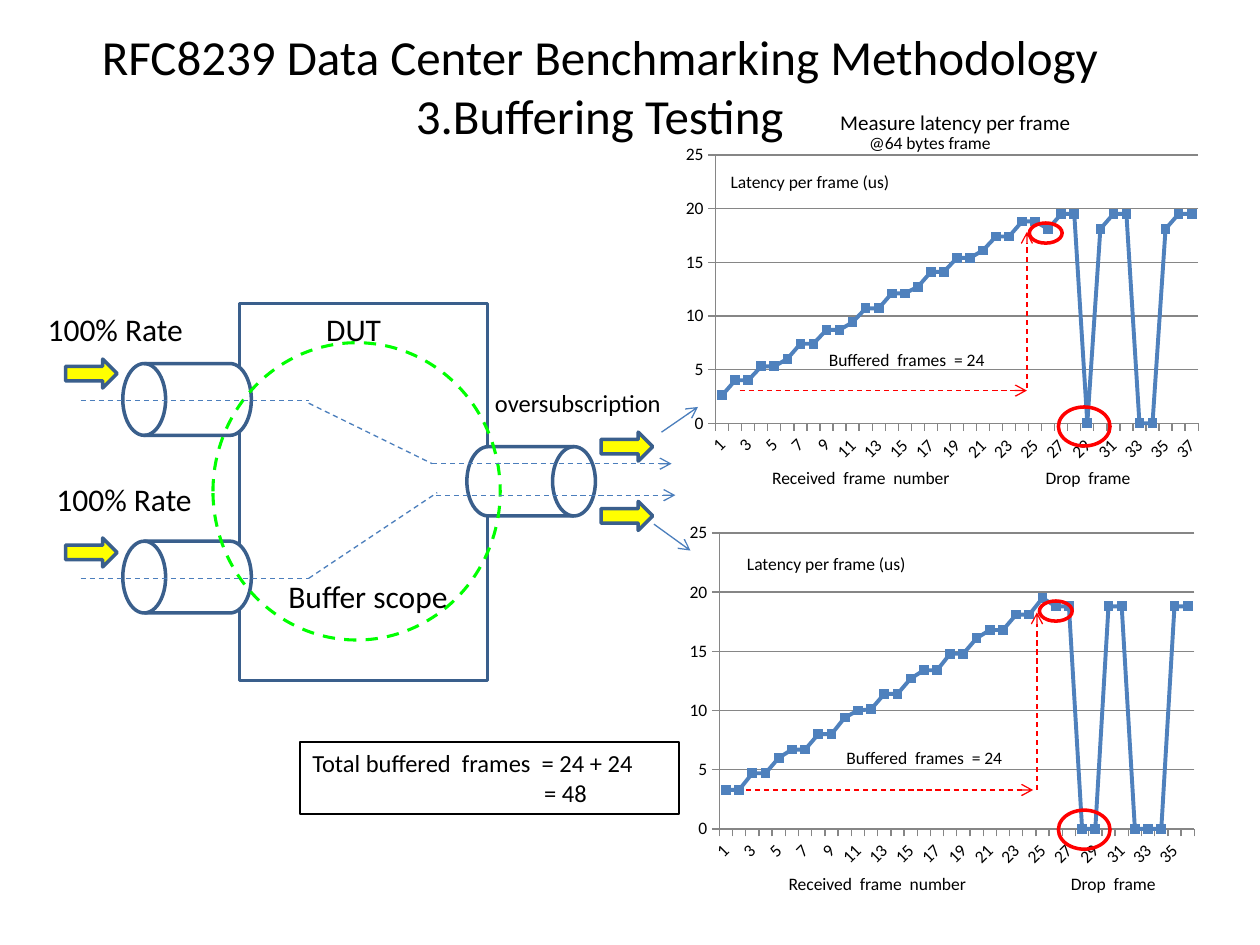
from dataclasses import dataclass
from typing import Optional

import pptx
import pptx.chart.data
import pptx.dml.color
import pptx.enum.chart
import pptx.enum.dml
import pptx.enum.shapes
import pptx.enum.text
import pptx.oxml
import pptx.oxml.ns
import pptx.util
from pptx.util import Inches

COLORS = {
    "text": "000000", "outline": "3A5F8C", "flow": "4B7EBC", "series": "4F81BD",
    "alert": "FF0000", "scope": "00FF00", "arrow": "FFFF00", "pipe": "FFFFFF",
    "axis": "868686",
}
FONT = "Calibri"
LABEL_HEIGHTS = {10: 0.27, 12: 0.3, 14: 0.34, 18: 0.4}
SHAPES = pptx.enum.shapes.MSO_SHAPE


@dataclass
class Label:
    text: str
    left: float
    top: float
    width: float
    size: int = 10
    wrap: bool = True


@dataclass
class Figure:
    kind: int
    left: float
    top: float
    width: float
    height: float
    line: str = "outline"
    fill: Optional[str] = None
    weight: float = 2
    rotation: int = 0
    dashed: bool = False


@dataclass
class Line:
    start: tuple[float, float]
    end: tuple[float, float]
    color: str = "flow"
    dashed: bool = True
    arrow: bool = False


@dataclass
class LatencyChart:
    box: tuple[float, float, float, float]
    plot: tuple[float, float, float, float]
    values: list[float]


def rgb(name: str):
    return pptx.dml.color.RGBColor.from_string(COLORS[name])


def set_font(font, size: float) -> None:
    font.name = FONT
    font.size = pptx.util.Pt(size)
    font.color.rgb = rgb("text")


def style_line(line, color: str, weight: float, dashed: bool = False) -> None:
    line.color.rgb = rgb(color)
    line.width = pptx.util.Pt(weight)
    if dashed:
        line.dash_style = pptx.enum.dml.MSO_LINE.DASH


def add_element(parent, tag: str, **attributes: str):
    element = pptx.oxml.ns.qn(tag)
    child = parent.makeelement(element, attributes)
    parent.append(child)
    return child


def draw_label(page, label: Label) -> None:
    box = page.shapes.add_textbox(Inches(label.left), Inches(label.top), Inches(label.width),
                                  Inches(LABEL_HEIGHTS[label.size]))
    box.text_frame.word_wrap = label.wrap
    para = box.text_frame.paragraphs[0]
    para.text = label.text
    set_font(para.font, label.size)


def draw_figure(page, figure: Figure):
    shape = page.shapes.add_shape(figure.kind, Inches(figure.left), Inches(figure.top),
                                  Inches(figure.width), Inches(figure.height))
    shape.shadow.inherit = False
    shape.rotation = figure.rotation
    if figure.fill:
        shape.fill.solid()
        shape.fill.fore_color.rgb = rgb(figure.fill)
    else:
        shape.fill.background()
    style_line(shape.line, figure.line, figure.weight, figure.dashed)
    return shape


def draw_line(page, line: Line) -> None:
    connector = page.shapes.add_connector(
        pptx.enum.shapes.MSO_CONNECTOR.STRAIGHT, *map(Inches, line.start + line.end))
    style_line(connector.line, line.color, 0.75, line.dashed)
    if line.arrow:
        add_element(connector.line._get_or_add_ln(), "a:tailEnd", type="arrow")
    add_element(connector._element.spPr, "a:effectLst")


def draw_chart(page, panel: LatencyChart) -> None:
    data = pptx.chart.data.CategoryChartData()
    data.categories = [str(number + 1) for number in range(len(panel.values))]
    data.add_series("Series 1", panel.values)
    chart = page.shapes.add_chart(pptx.enum.chart.XL_CHART_TYPE.LINE_MARKERS,
                                  *map(Inches, panel.box), data).chart
    chart.has_legend = False
    chart.has_title = False
    set_font(chart.font, 10)
    chart.plots[0].vary_by_categories = False
    series = chart.plots[0].series[0]
    series.smooth = False
    style_line(series.format.line, "series", 2.25)
    series.marker.style = pptx.enum.chart.XL_MARKER_STYLE.SQUARE
    series.marker.size = 5
    series.marker.format.fill.solid()
    series.marker.format.fill.fore_color.rgb = rgb("series")
    style_line(series.marker.format.line, "series", 0.75)

    for axis in (chart.category_axis, chart.value_axis):
        axis.major_tick_mark = pptx.enum.chart.XL_TICK_MARK.OUTSIDE
        axis.minor_tick_mark = pptx.enum.chart.XL_TICK_MARK.NONE
        style_line(axis.format.line, "axis", 0.75)
        set_font(axis.tick_labels.font, 10)
    chart.value_axis.minimum_scale = 0
    chart.value_axis.maximum_scale = 25
    chart.value_axis.major_unit = 5
    style_line(chart.value_axis.major_gridlines.format.line, "axis", 0.75)

    axis_xml = chart.category_axis._element
    axis_xml.find(pptx.oxml.ns.qn("c:txPr")).find(pptx.oxml.ns.qn("a:bodyPr")).set("rot", "-2700000")
    skip = axis_xml.makeelement(pptx.oxml.ns.qn("c:tickLblSkip"), {"val": "2"})
    axis_xml.find(pptx.oxml.ns.qn("c:noMultiLvlLbl")).addprevious(skip)

    plot_area = chart._chartSpace.chart.plotArea
    for old in plot_area.findall(pptx.oxml.ns.qn("c:layout")):
        plot_area.remove(old)
    layout = plot_area.makeelement(pptx.oxml.ns.qn("c:layout"), {})
    plot_area.insert(0, layout)
    manual = add_element(layout, "c:manualLayout")
    add_element(manual, "c:layoutTarget", val="inner")
    for name in ("xMode", "yMode"):
        add_element(manual, f"c:{name}", val="edge")
    left, top, width, height = panel.box
    plot_left, plot_top, plot_width, plot_height = panel.plot
    fractions = {"x": (plot_left - left) / width, "y": (plot_top - top) / height,
                 "w": plot_width / width, "h": plot_height / height}
    for name, fraction in fractions.items():
        add_element(manual, f"c:{name}", val=f"{fraction:.4f}")


def draw_title(page) -> None:
    box = page.shapes.add_textbox(Inches(0.51), Inches(0.05), Inches(8.5), Inches(1.26))
    box.text_frame.word_wrap = True
    box.text_frame.vertical_anchor = pptx.enum.text.MSO_ANCHOR.MIDDLE
    para = box.text_frame.paragraphs[0]
    para.alignment = pptx.enum.text.PP_ALIGN.CENTER
    para.add_run().text = "RFC8239 Data Center Benchmarking Methodology"
    para.add_line_break()
    para.add_run().text = "3.Buffering Testing"
    set_font(para.font, 28)


def draw_total(page) -> None:
    box = draw_figure(page, Figure(SHAPES.RECTANGLE, 2.38, 5.89, 3.01, 0.57, "text", weight=0.75))
    frame = box.text_frame
    frame.vertical_anchor = pptx.enum.text.MSO_ANCHOR.TOP
    frame.text = "Total buffered  frames  = 24 + 24\n= 48"
    for para in frame.paragraphs:
        para.alignment = pptx.enum.text.PP_ALIGN.LEFT
        set_font(para.font, 14)
    frame.paragraphs[1]._p.get_or_add_pPr().set("marL", str(Inches(1.84)))


CHARTS = [
    LatencyChart((5.36, 1.1, 4.24, 2.62), (5.68, 1.23, 3.83, 2.13), [
        2.6, 4, 4, 5.3, 5.3, 6, 7.4, 7.4, 8.7, 8.7, 9.4, 10.7, 10.7, 12.1, 12.1, 12.7, 14.1, 14.1, 15.4,
        15.4, 16.1, 17.4, 17.4, 18.8, 18.8, 18.1, 19.5, 19.5, 0, 18.1, 19.5, 19.5, 0, 0, 18.1, 19.5, 19.5]),
    LatencyChart((5.4, 4.1, 4.16, 2.85), (5.71, 4.23, 3.77, 2.35), [
        3.3, 3.3, 4.7, 4.7, 6, 6.7, 6.7, 8, 8, 9.4, 10, 10.1, 11.4, 11.4, 12.7, 13.4, 13.4, 14.8,
        14.8, 16.1, 16.8, 16.8, 18.1, 18.1, 19.5, 18.8, 18.8, 0, 0, 18.8, 18.8, 0, 0, 0, 18.8, 18.8]),
]
PIPES = [(3.94, 3.31, 0.55, 90), (1.2, 2.66, 0.57, 270), (1.2, 4.07, 0.57, 270)]
RATE_ARROWS = [(0.52, 2.85), (4.77, 3.43), (4.77, 3.98), (0.52, 4.27)]
DROP_RINGS = [(8.4, 3.23), (8.4, 6.43)]
PEAK_RINGS = [(8.17, 1.77), (8.25, 4.77)]
FIGURES = [
    Figure(SHAPES.RECTANGLE, 1.9, 2.41, 1.97, 2.99),
    *[Figure(SHAPES.FLOWCHART_MAGNETIC_DISK, left, top, width, 1.02, fill="pipe", rotation=turn)
      for left, top, width, turn in PIPES],
    *[Figure(SHAPES.RIGHT_ARROW, *spot, 0.41, 0.23, fill="arrow") for spot in RATE_ARROWS],
    *[Figure(SHAPES.OVAL, *spot, 0.41, 0.31, "alert") for spot in DROP_RINGS],
    *[Figure(SHAPES.OVAL, *spot, 0.26, 0.16, "alert") for spot in PEAK_RINGS],
    Figure(SHAPES.OVAL, 1.69, 2.72, 2.28, 2.36, "scope", weight=1.75, dashed=True),
]
LINES = [
    Line((0.64, 4.59), (2.45, 4.59)), Line((2.45, 4.59), (3.47, 3.91)),
    Line((3.46, 3.93), (5.36, 3.93), arrow=True),
    Line((0.64, 3.18), (2.45, 3.18)), Line((2.45, 3.2), (3.43, 3.68)),
    Line((3.43, 3.68), (5.33, 3.68), arrow=True),
    Line((5.25, 3.43), (5.54, 3.23), dashed=False, arrow=True),
    Line((5.19, 4.16), (5.48, 4.37), dashed=False, arrow=True),
    Line((5.87, 3.1), (8.15, 3.1), "alert", arrow=True),
    Line((8.15, 3.08), (8.15, 1.84), "alert", arrow=True),
    Line((5.92, 6.27), (8.2, 6.27), "alert", arrow=True),
    Line((8.23, 6.27), (8.23, 4.86), "alert", arrow=True),
]
CHART_LABELS = [
    ("Latency per frame (us)", 1.95, [(5.7, 1.31), (5.83, 4.34)]),
    ("Buffered  frames  = 24", 1.53, [(6.48, 2.72), (6.62, 5.88)]),
    ("Received  frame  number", 1.95, [(6.03, 3.66), (6.16, 6.88)]),
    ("Drop  frame", 1.01, [(8.2, 3.66), (8.4, 6.88)]),
]
LABELS = [
    Label("100% Rate", 0.28, 2.41, 1.3, 18),
    Label("100% Rate", 0.35, 3.76, 1.47, 18),
    Label("DUT", 2.49, 2.41, 0.79, 18),
    Label("Buffer scope", 2.19, 4.53, 1.78, 18),
    Label("oversubscription", 3.83, 3.03, 1.53, 14, wrap=False),
    Label("Measure latency per frame", 6.57, 0.82, 2.55, 12),
    Label("@64 bytes frame", 6.8, 1, 1.35),
    *[Label(text, *spot, width) for text, width, spots in CHART_LABELS for spot in spots],
]


def main() -> None:
    deck = pptx.Presentation()
    deck.slide_width, deck.slide_height = Inches(10), Inches(7.5)
    page = deck.slides.add_slide(deck.slide_layouts[6])
    for panel in CHARTS:
        draw_chart(page, panel)
    draw_title(page)
    for figure in FIGURES:
        draw_figure(page, figure)
    for line in LINES:
        draw_line(page, line)
    for label in LABELS:
        draw_label(page, label)
    draw_total(page)
    deck.save("out.pptx")


if __name__ == "__main__":
    main()
